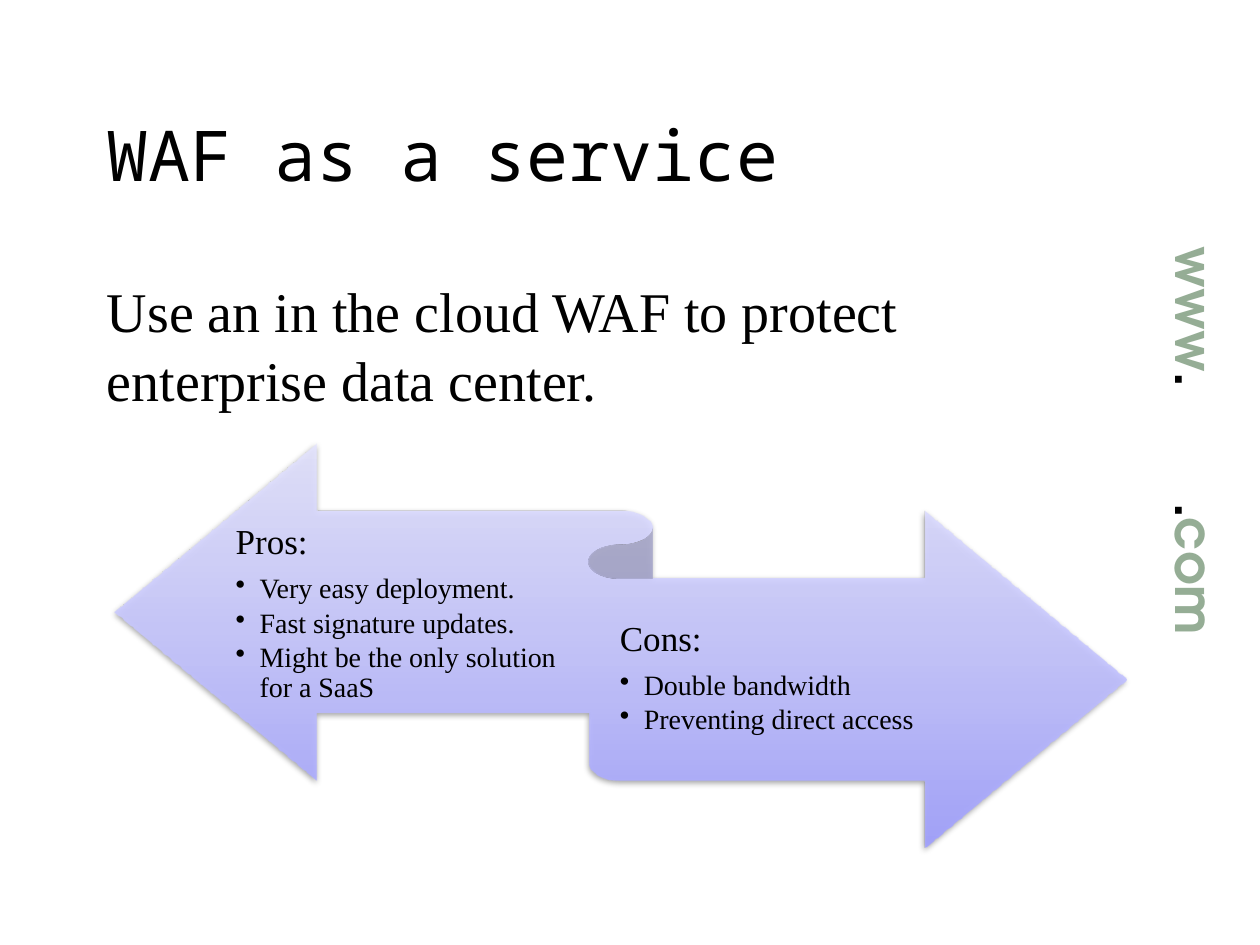
from lxml import etree
from pptx import Presentation
from pptx import util as u
from pptx.dml.color import RGBColor
from pptx.enum import shapes, text
from pptx.oxml.ns import nsdecls, qn

COLORS = {"ink": "000000", "sage": "95AD95",
          "low": "9F9FFF", "middle": "BBBBFF", "high": "E5E5FF"}
SERIF, MONO, SANS = "Times New Roman", "Noto Sans Mono", "TeX Gyre Adventor"


class Deck:
    """Hold the colours and current slide, and draw each kind of element."""

    def __init__(self, slide, colors):
        self.slide = slide
        self.colors = colors

    def style(self, run, size, face, color="ink", bold=False):
        run.font.size = u.Pt(size)
        run.font.name = face
        run.font.bold = bold
        run.font.color.rgb = RGBColor.from_string(self.colors[color])

    def frame(self, left, top, width, height, anchor=text.MSO_ANCHOR.TOP):
        box = self.slide.shapes.add_textbox(*map(u.Inches, (left, top, width, height)))
        box.text_frame.word_wrap = True
        box.text_frame.vertical_anchor = anchor
        return box

    def label(self, words, place, size, face, spacing=1.0, anchor=text.MSO_ANCHOR.TOP):
        frame = self.frame(*place, anchor).text_frame
        frame.text = words
        frame.paragraphs[0].line_spacing = spacing
        self.style(frame.paragraphs[0].runs[0], size, face)

    def side_address(self, parts, place, gap_end):
        box = self.frame(*place)
        box.rotation = 90
        line = box.text_frame.paragraphs[0]
        tabs = etree.SubElement(line._p.get_or_add_pPr(), qn("a:tabLst"))
        etree.SubElement(tabs, qn("a:tab"), pos=str(u.Inches(gap_end)), algn="l")
        for words, color in parts:
            run = line.add_run()
            run.text = words
            self.style(run, 30, SANS, color, bold=True)

    def ribbon(self, place, stops):
        ribbon = self.slide.shapes.add_shape(
            shapes.MSO_SHAPE.LEFT_RIGHT_RIBBON, *map(u.Inches, place))
        ribbon.line.fill.background()
        ribbon.shadow.inherit = False
        properties = ribbon._element.spPr
        blend = "".join(
            f'<a:gs pos="{position * 1000}"><a:srgbClr val="{self.colors[color]}">'
            '<a:alpha val="90000"/></a:srgbClr></a:gs>' for position, color in stops)
        properties.find(qn("a:prstGeom")).addnext(etree.fromstring(
            f'<a:gradFill {nsdecls("a")} rotWithShape="1"><a:gsLst>{blend}</a:gsLst>'
            '<a:lin ang="16200000" scaled="0"/></a:gradFill>'))
        properties.find(qn("a:effectLst")).append(etree.fromstring(
            f'<a:outerShdw {nsdecls("a")} blurRad="{u.Pt(3.1)}" dist="{u.Pt(1.6)}" '
            f'dir="5400000" rotWithShape="0"><a:srgbClr val="{self.colors["ink"]}">'
            '<a:alpha val="38000"/></a:srgbClr></a:outerShdw>'))

    def points(self, heading, items, place):
        frame = self.frame(*place, text.MSO_ANCHOR.MIDDLE).text_frame
        frame.margin_left = frame.margin_right = 0
        frame.margin_top = frame.margin_bottom = u.Inches(0.08)
        frame.text = "\n".join([heading, *items])
        for number, line in enumerate(frame.paragraphs):
            if number:
                marker = line._p.get_or_add_pPr()
                marker.set("lvl", "1")
                marker.set("marL", str(u.Inches(0.19)))
                marker.set("indent", str(-u.Inches(0.19)))
                etree.SubElement(marker, qn("a:buChar"), char="•")
            line.line_spacing = 0.9
            line.space_after = u.Pt(2.4 if number else 7)
            self.style(line.runs[0], 16 if number else 20, SERIF)


def main():
    presentation = Presentation()
    presentation.slide_width, presentation.slide_height = u.Inches(10), u.Inches(7.5)
    deck = Deck(presentation.slides.add_slide(presentation.slide_layouts[6]), COLORS)

    deck.side_address([("www", "sage"), (".\t.", "ink"), ("com", "sage")],
                      (7.8, 3.25, 3.39, 0.6), 2.04)
    deck.label("WAF as a service", (0.75, 0.84, 7.72, 0.75), 40, MONO,
               anchor=text.MSO_ANCHOR.MIDDLE)
    deck.label("Use an in the cloud WAF to protect enterprise data center.",
               (0.75, 2.12, 7.01, 1.18), 32, SERIF, spacing=1.04)
    deck.ribbon((0.91, 3.52, 8.03, 3.21), [(0, "low"), (35, "middle"), (100, "high")])
    deck.points("Pros:", ["Very easy deployment.", "Fast signature updates.",
                          "Might be the only solution for a SaaS"],
                (1.87, 4.09, 2.65, 1.57))
    deck.points("Cons:", ["Double bandwidth", "Preventing direct access"],
                (4.92, 4.6, 3.13, 1.57))
    presentation.save("out.pptx")


if __name__ == "__main__":
    main()
